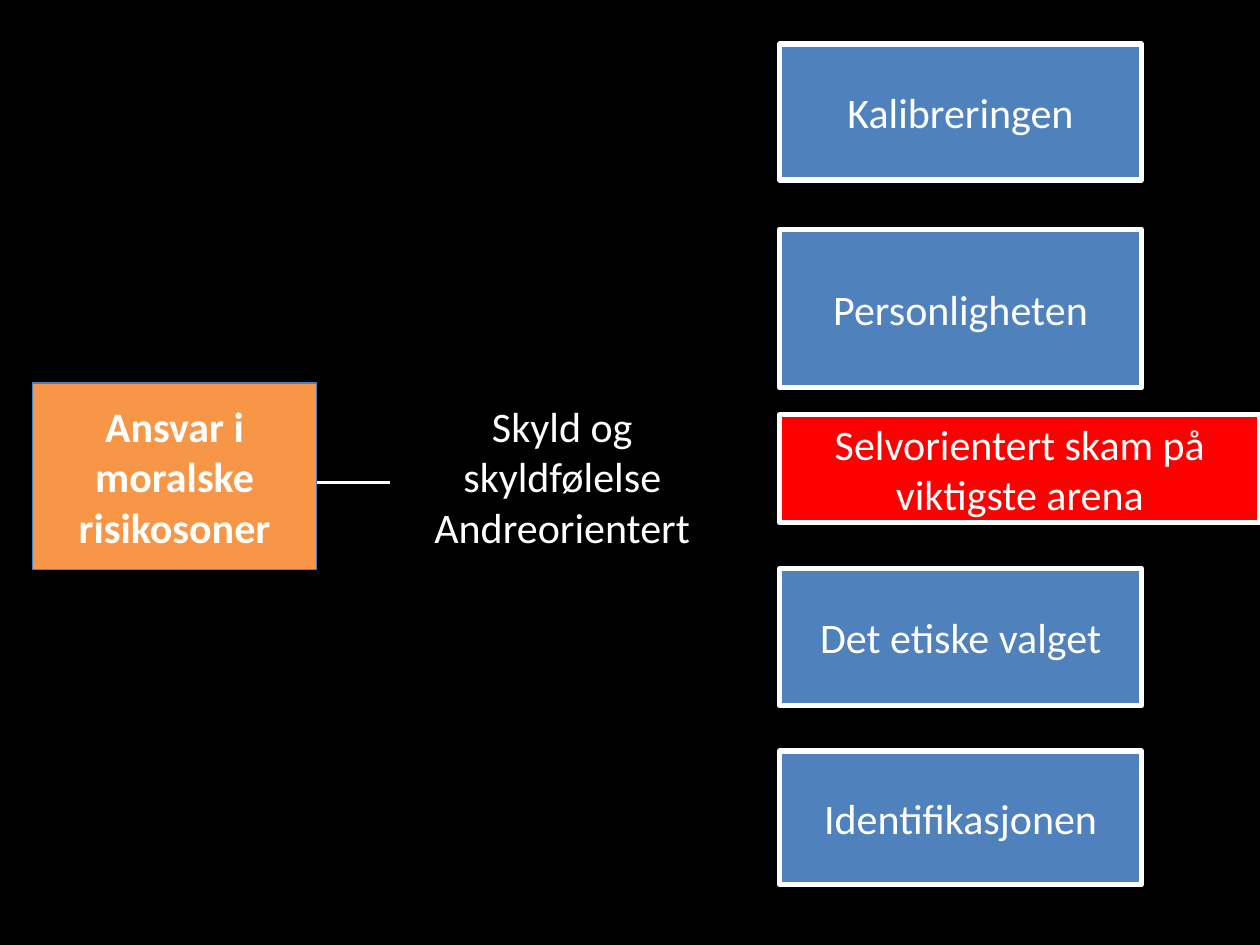
from lxml import etree
from pptx import Presentation
from pptx.dml.color import RGBColor
from pptx.enum.shapes import MSO_CONNECTOR, MSO_SHAPE
from pptx.enum.text import MSO_ANCHOR, PP_ALIGN
from pptx.oxml.ns import qn
from pptx.util import Cm, Pt

RECT = MSO_SHAPE.RECTANGLE
LINE = MSO_CONNECTOR.STRAIGHT
MIDDLE = MSO_ANCHOR.MIDDLE
CENTER = PP_ALIGN.CENTER

BLACK, WHITE, BLUE, RED = "000000", "FFFFFF", "4F81BD", "FF0000"
ORANGE, EDGE = "F79646", "4B7EBC"

CAUSES = [
    (["Skyld og skyldfølelse", "Andreorientert"], 7.87, 6.93, BLACK, BLACK, False),
    (["Ansvar i moralske risikosoner"], 0.66, 5.72, ORANGE, EDGE, True),
]
CAUSE_TOP, CAUSE_HIGH = 7.72, 3.76

FACTORS = [
    ("Kalibreringen", 0.89, 7.29, 2.74, BLUE),
    ("Personligheten", 4.62, 7.29, 3.2, BLUE),
    ("Selvorientert skam på viktigste arena", 8.36, 9.68, 2.18, RED),
    ("Det etiske valget", 11.46, 7.29, 2.77, BLUE),
    ("Identifikasjonen", 15.14, 7.29, 2.69, BLUE),
]
FACTOR_LEFT = 15.72
LINK = (2.49, 9.73, 14.4, 9.73)


def color(code):
    return RGBColor.from_string(code)


def add_box(slide, lines, place, fill, edge, width, bold=False):
    box = slide.shapes.add_shape(RECT, *map(Cm, place))
    box.shadow.inherit = False
    box.fill.solid()
    box.fill.fore_color.rgb = color(fill)
    box.line.color.rgb = color(edge)
    box.line.width = Pt(width)
    frame = box.text_frame
    frame.word_wrap = True
    frame.vertical_anchor = MIDDLE
    for i, line in enumerate(lines):
        para = frame.add_paragraph() if i else frame.paragraphs[0]
        para.alignment = CENTER
        run = para.add_run()
        run.text = line
        run.font.name = "Calibri"
        run.font.size = Pt(24)
        run.font.bold = bold
        run.font.color.rgb = color(WHITE)


def add_link(slide, ends):
    link = slide.shapes.add_connector(LINE, *map(Cm, ends))
    link.line.color.rgb = color(WHITE)
    link.line.width = Pt(2)
    etree.SubElement(link._element.spPr, qn("a:effectLst"))


def main():
    deck = Presentation()
    deck.slide_width, deck.slide_height = Cm(25.4), Cm(19.05)
    slide = deck.slides.add_slide(deck.slide_layouts[6])
    slide.background.fill.solid()
    slide.background.fill.fore_color.rgb = color(BLACK)

    add_link(slide, LINK)
    for lines, left, wide, fill, edge, bold in CAUSES:
        place = (left, CAUSE_TOP, wide, CAUSE_HIGH)
        add_box(slide, lines, place, fill, edge, 0.75, bold)
    for text, top, wide, high, fill in FACTORS:
        add_box(slide, [text], (FACTOR_LEFT, top, wide, high), fill, WHITE, 3)

    deck.save("out.pptx")


if __name__ == "__main__":
    main()
